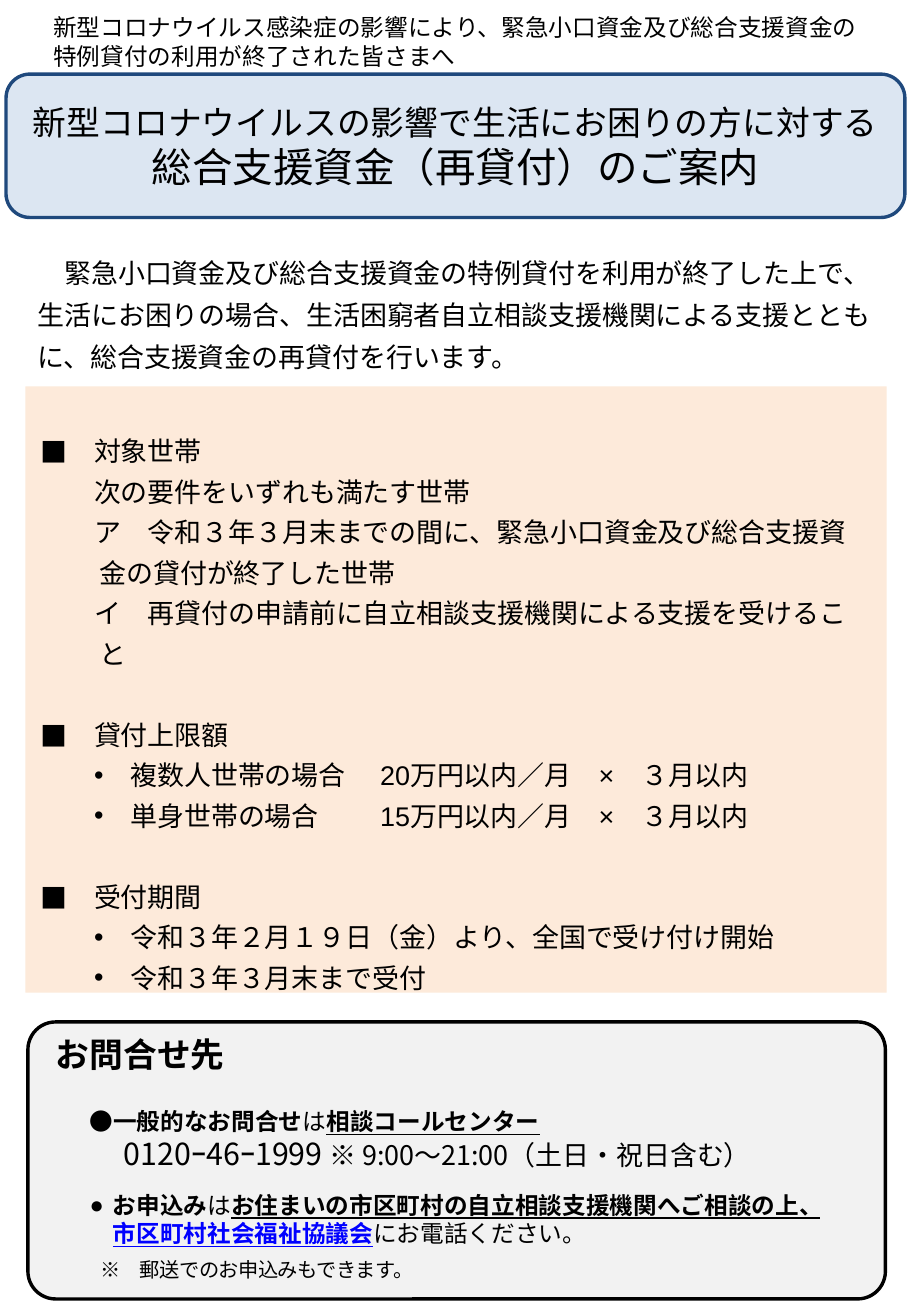
from dataclasses import dataclass

from lxml.etree import SubElement
from pptx import Presentation
from pptx.dml.color import RGBColor
from pptx.enum.shapes import MSO_SHAPE as Shape
from pptx.enum.text import MSO_ANCHOR as Anchor, MSO_AUTO_SIZE as AutoSize, PP_ALIGN as Align
from pptx.oxml.ns import qn
from pptx.util import Inches, Pt

BLACK = RGBColor(0x00, 0x00, 0x00)
NAVY = RGBColor(0x1F, 0x49, 0x7D)
PALE_BLUE = RGBColor(0xDC, 0xE6, 0xF2)
PEACH = RGBColor(0xFD, 0xEA, 0xDA)
PALE_GREY = RGBColor(0xF2, 0xF2, 0xF2)
LINK_BLUE = RGBColor(0x00, 0x00, 0xFF)

CJK = "Noto Sans CJK JP"
CELL = Inches(0.1)
EM = Pt(16)


@dataclass
class Box:
    """An area measured in columns and rows of the slide grid."""
    column: float
    row: float
    columns: float
    rows: float

    def inner(self, column, row, columns, rows):
        """Return an area offset from this one's top left corner."""
        return Box(self.column + column, self.row + row, columns, rows)

    def place(self):
        """Return left, top, width and height as lengths."""
        return [round(n * CELL) for n in (self.column, self.row, self.columns, self.rows)]


def style_run(run, size, font=CJK, color=BLACK, bold=False, underline=False):
    """Format one run, with the Japanese typeface for its East Asian text."""
    run.font.size, run.font.name = Pt(size), font
    run.font.bold, run.font.underline = bold, underline
    run.font.color.rgb = color
    SubElement(run.font._element, qn("a:ea"), typeface=CJK)


def indent(paragraph, left, first=0):
    """Set the left margin and first-line offset."""
    properties = paragraph._p.get_or_add_pPr()
    properties.set("marL", str(int(left)))
    properties.set("indent", str(int(first)))


def add_bullet(paragraph, mark, font):
    """Give a paragraph a bullet character."""
    properties = paragraph._p.get_or_add_pPr()
    SubElement(properties, qn("a:buFont"), typeface=font)
    SubElement(properties, qn("a:buChar"), char=mark)


def add_runs(paragraph, pieces):
    """Fill a paragraph with (text, size, style) pieces."""
    for text, size, style in pieces:
        run = paragraph.add_run()
        run.text = text
        style_run(run, size, **style)


def add_text(slide, box, *lines):
    """Add a wrapping text box with one paragraph per list of pieces."""
    frame = slide.shapes.add_textbox(*box.place()).text_frame
    frame.word_wrap = True
    for number, pieces in enumerate(lines):
        add_runs(frame.add_paragraph() if number else frame.paragraphs[0], pieces)
    return frame


def add_panel(slide, box, kind, fill, line=None):
    """Add a filled panel, outlined when a line colour is given."""
    panel = slide.shapes.add_shape(kind, *box.place())
    panel.shadow.inherit = False
    panel.fill.solid()
    panel.fill.fore_color.rgb = fill
    if line is None:
        panel.line.fill.background()
    else:
        panel.line.color.rgb = line
        panel.line.width = Pt(2)
    return panel


def add_banner(slide, box):
    """Place the title on its rounded banner."""
    add_panel(slide, box, Shape.ROUNDED_RECTANGLE, PALE_BLUE, NAVY)
    title = slide.shapes.title
    title.left, title.top, title.width, title.height = box.place()
    slide.shapes._spTree.append(title._element)
    frame = title.text_frame
    frame.text = "新型コロナウイルスの影響で生活にお困りの方に対する\n総合支援資金（再貸付）のご案内"
    frame.auto_size, frame.vertical_anchor = AutoSize.NONE, Anchor.MIDDLE
    for paragraph, size in zip(frame.paragraphs, (20, 24)):
        paragraph.alignment = Align.CENTER
        style_run(paragraph.runs[0], size)


def add_intro(slide, box):
    """Add the opening paragraph."""
    opening = add_text(slide, box, [(
        "緊急小口資金及び総合支援資金の特例貸付を利用が終了した上で、生活にお困りの場合、"
        "生活困窮者自立相談支援機関による支援とともに、総合支援資金の再貸付を行います。", 16, {})]).paragraphs[0]
    opening.line_spacing = Pt(25)
    indent(opening, 0, EM)


def add_conditions(slide, box):
    """Add the panel of eligibility, limits and application period."""
    sections = [
        ("対象世帯", [
            ("plain", "次の要件をいずれも満たす世帯"),
            ("clause", "ア　令和３年３月末までの間に、緊急小口資金及び総合支援資金の貸付が終了した世帯"),
            ("clause", "イ　再貸付の申請前に自立相談支援機関による支援を受けること")]),
        ("貸付上限額", [
            ("bullet", "複数人世帯の場合\t20万円以内／月　×　３月以内"),
            ("bullet", "単身世帯の場合\t15万円以内／月　×　３月以内")]),
        ("受付期間", [
            ("bullet", "令和３年２月１９日（金）より、全国で受け付け開始"),
            ("bullet", "令和３年３月末まで受付")]),
    ]
    indents = {"heading": (2 * EM, -2 * EM), "plain": (2 * EM, 0),
               "clause": (2.2 * EM, -0.2 * EM), "bullet": (3.35 * EM, -1.35 * EM)}
    marks = {"heading": ("■", CJK), "bullet": ("•", "Arial")}
    frame = add_panel(slide, box, Shape.RECTANGLE, PEACH).text_frame
    frame.word_wrap, frame.vertical_anchor = True, Anchor.TOP
    frame.margin_left, frame.margin_right, frame.margin_top = Inches(0.12), Inches(0.11), Inches(0.33)
    rows = [row for heading, items in sections for row in [("heading", heading), *items]]
    for number, (kind, text) in enumerate(rows):
        paragraph = frame.add_paragraph() if number else frame.paragraphs[0]
        paragraph.text = text
        paragraph.alignment = Align.LEFT
        paragraph.line_spacing = Pt(24)
        if number and kind == "heading":
            paragraph.space_before = Pt(24)
        indent(paragraph, *indents[kind])
        if kind in marks:
            add_bullet(paragraph, *marks[kind])
        if "\t" in text:
            stops = SubElement(paragraph._p.get_or_add_pPr(), qn("a:tabLst"))
            SubElement(stops, qn("a:tab"), pos=str(Inches(2.8)), algn="l")
        style_run(paragraph.runs[0], 16, "Arial")


def add_contact(slide, box):
    """Add the contact panel with the call centre and application notes."""
    bold = {"bold": True}
    marked = {"bold": True, "underline": True}
    panel = add_panel(slide, box, Shape.ROUNDED_RECTANGLE, PALE_GREY, BLACK)
    panel.adjustments[0] = 0.1
    add_text(slide, box.inner(1.3, 0.5, 18.1, 4.4),
             [("お問合せ先", 20, {"font": "Calibri", "bold": True})])
    hotline = add_text(
        slide, box.inner(4.1, 6.5, 65.6, 6.4),
        [("●", 14, {}), ("一般的なお問合せ", 14, bold), ("は", 14, {}), ("相談コールセンター", 14, marked)],
        [("0120ｰ46ｰ1999 ", 18, {}), ("※ 9:00～21:00（土日・祝日含む）", 16, {})])
    indent(hotline.paragraphs[1], Inches(0.28))
    application = add_text(
        slide, box.inner(4.1, 13.4, 62.1, 5.5),
        [("お申込み", 14, bold), ("は", 14, {}),
         ("お住まいの市区町村の自立相談支援機関へご相談の上、", 14, marked),
         ("市区町村社会福祉協議会", 14, {**marked, "color": LINK_BLUE}),
         ("にお電話ください。", 14, {})]).paragraphs[0]
    indent(application, Inches(0.19), -Inches(0.19))
    add_bullet(application, "●", "Arial")
    postal = add_text(slide, box.inner(5, 18.9, 28.9, 3),
                      [("※　郵送でのお申込みもできます。", 12, {})])
    postal.paragraphs[0].runs[0].font._element.set("spc", "-30")


def main():
    """Build the flyer and save it."""
    deck = Presentation()
    deck.slide_width, deck.slide_height = Inches(7.5), Inches(10.83)
    flyer = deck.slides.add_slide(deck.slide_layouts[5])
    add_text(flyer, Box(3.4, 0.6, 69.5, 5.7),
             [("新型コロナウイルス感染症の影響により、緊急小口資金及び総合支援資金の", 14, {})],
             [("特例貸付の利用が終了された皆さまへ", 14, {})])
    add_banner(flyer, Box(0.5, 6.1, 74, 11.8))
    add_intro(flyer, Box(2.1, 19.8, 70.9, 11.5))
    add_conditions(flyer, Box(2.1, 31.8, 70.9, 49.9))
    add_contact(flyer, Box(2.3, 84.1, 70.6, 22.8))
    deck.save("out.pptx")


if __name__ == "__main__":
    main()
